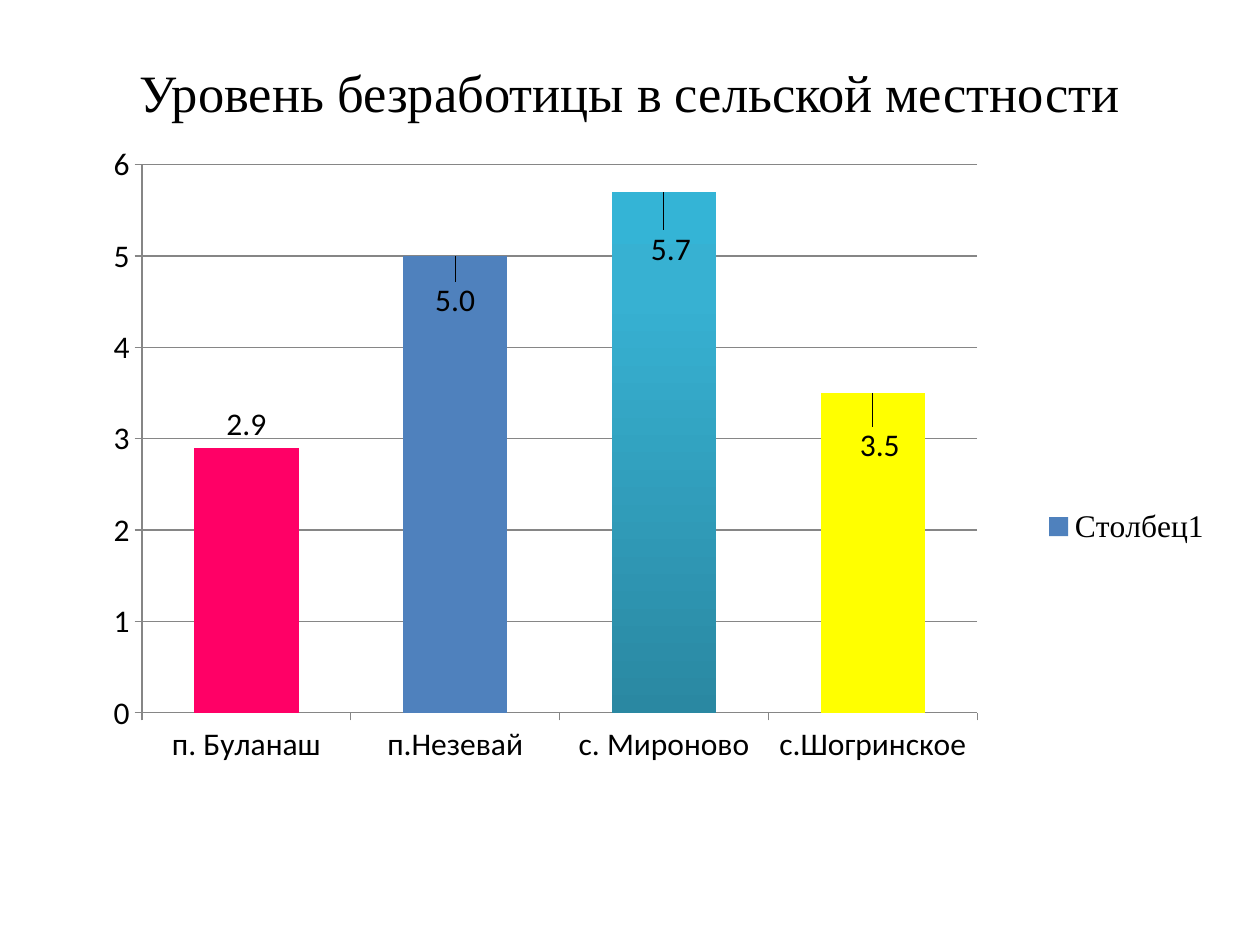
from copy import deepcopy
from lxml.etree import SubElement
from pptx import Presentation
from pptx.chart.data import CategoryChartData
from pptx.dml.color import RGBColor
from pptx.enum.chart import XL_CHART_TYPE, XL_LABEL_POSITION, XL_LEGEND_POSITION, XL_TICK_MARK
from pptx.enum.text import MSO_ANCHOR, PP_ALIGN
from pptx.oxml import parse_xml
from pptx.oxml.ns import nsdecls, qn
from pptx.util import Inches, Pt

TITLE = "Уровень безработицы в сельской местности"
SERIES = "Столбец1"
RATES = {"п. Буланаш": 2.9, "п.Незевай": 5, "с. Мироново": 5.7, "с.Шогринское": 3.5}
COLORS = {"text": "000000", "bar": "4F81BD", "pink": "FF0066", "yellow": "FFFF00",
          "line": "868686", "deep": "2A88A2", "mid": "37B1D2", "light": "34B4D6"}
FILLS = {0: "pink", 3: "yellow"}
FADE = [(0, "deep"), (0.8, "mid"), (1, "light")]
SHIFTS = {1: (0, 0.09), 2: (0.006, 0.106), 3: (0.006, 0.1)}
PLOT = (0.068, 0.026, 0.719, 0.718)
WIDE, HIGH = 10, 7.5
EDGE = WIDE / 20


def color(name):
    return RGBColor.from_string(COLORS[name])


def style(font, size, face):
    font.size, font.name = Pt(size), face
    font.color.rgb = color("text")


def layout(**parts):
    """Make a manual chart layout from shares of the chart's size."""
    root = parse_xml(f"<c:layout {nsdecls('c')}><c:manualLayout/></c:layout>")
    for tag, val in parts.items():
        SubElement(root[0], qn(f"c:{tag}")).set("val", str(val))
    return root


def fade(fill):
    """Fill from the bottom up with the stops in FADE."""
    fill.gradient()
    fill.gradient_angle = 90
    first = fill.gradient_stops[0]._gs
    first.addnext(deepcopy(first))
    for stop, (place, name) in zip(fill.gradient_stops, FADE):
        stop.position = place
        stop.color.rgb = color(name)


def add_title(slide):
    box = slide.shapes.add_textbox(Inches(EDGE), Inches(0.3), Inches(WIDE - 2 * EDGE), Inches(0.85))
    frame = box.text_frame
    frame.word_wrap = True
    frame.vertical_anchor = MSO_ANCHOR.MIDDLE
    para = frame.paragraphs[0]
    para.text, para.alignment = TITLE, PP_ALIGN.CENTER
    style(para.font, 30, "Times New Roman")


def style_axes(chart):
    for axis in (chart.category_axis, chart.value_axis):
        axis.major_tick_mark = XL_TICK_MARK.OUTSIDE
        axis.minor_tick_mark = XL_TICK_MARK.NONE
        axis.format.line.color.rgb = color("line")
    scale = chart.value_axis
    scale.minimum_scale, scale.maximum_scale, scale.major_unit = 0, 6, 1
    scale.major_gridlines.format.line.color.rgb = color("line")
    scale.tick_labels.number_format = "General"
    scale.tick_labels.number_format_is_linked = False


def style_bars(bars):
    bars.format.fill.solid()
    bars.format.fill.fore_color.rgb = color("bar")
    for i, name in FILLS.items():
        fill = bars.points[i].format.fill
        fill.solid()
        fill.fore_color.rgb = color(name)
    fade(bars.points[2].format.fill)


def style_labels(bars):
    labels = bars.data_labels
    labels.show_value = True
    labels.number_format, labels.number_format_is_linked = "0.0", False
    labels.position = XL_LABEL_POSITION.OUTSIDE_END
    style(labels.font, 18, "Calibri")
    for i, (x, y) in SHIFTS.items():
        label = bars.points[i].data_label
        label.position = XL_LABEL_POSITION.OUTSIDE_END
        style(label.font, 18, "Calibri")
    for item, (x, y) in zip(labels._element.findall(qn("c:dLbl")), SHIFTS.values()):
        form = parse_xml(f'<c:numFmt {nsdecls("c")} formatCode="0.0" sourceLinked="0"/>')
        item[0].addnext(form)
        item[0].addnext(layout(x=x, y=y))


def add_chart(slide):
    data = CategoryChartData(number_format="0.0")
    data.categories = list(RATES)
    data.add_series(SERIES, list(RATES.values()))
    chart = slide.shapes.add_chart(XL_CHART_TYPE.COLUMN_CLUSTERED, Inches(EDGE), Inches(1.15),
                                   Inches(9.22), Inches(6.06), data).chart
    style(chart.font, 18, "Calibri")
    chart.has_title = False
    chart.has_legend = True
    chart.legend.position = XL_LEGEND_POSITION.RIGHT
    chart.legend.include_in_layout = False
    style(chart.legend.font, 18, "Times New Roman")
    plot = chart.plots[0]
    plot.gap_width, plot.vary_by_categories = 100, False
    style_axes(chart)
    style_bars(plot.series[0])
    style_labels(plot.series[0])
    area = chart._chartSpace.find(".//" + qn("c:plotArea"))
    for old in area.findall(qn("c:layout")):
        area.remove(old)
    x, y, w, h = PLOT
    area.insert(0, layout(layoutTarget="inner", xMode="edge", yMode="edge", x=x, y=y, w=w, h=h))


def main():
    deck = Presentation()
    deck.slide_width, deck.slide_height = Inches(WIDE), Inches(HIGH)
    slide = deck.slides.add_slide(deck.slide_layouts[6])
    add_title(slide)
    add_chart(slide)
    deck.save("out.pptx")


if __name__ == "__main__":
    main()
